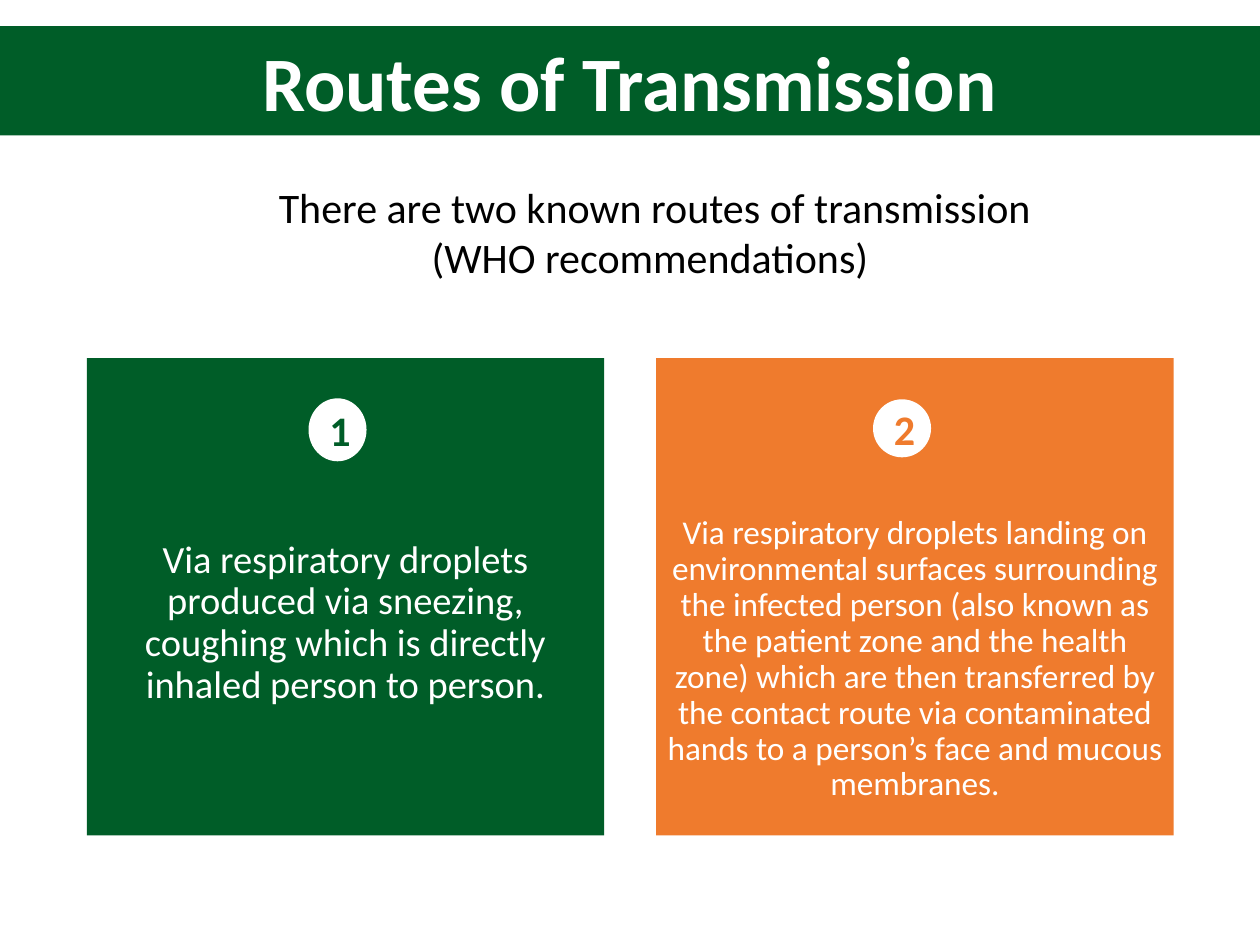
from pptx import Presentation
from pptx.dml.color import RGBColor
from pptx.enum.shapes import MSO_SHAPE
from pptx.enum.text import MSO_ANCHOR, MSO_AUTO_SIZE, PP_ALIGN
from pptx.util import Cm, Pt

RECTANGLE, OVAL = MSO_SHAPE.RECTANGLE, MSO_SHAPE.OVAL
TOP, MIDDLE = MSO_ANCHOR.TOP, MSO_ANCHOR.MIDDLE
CENTER = PP_ALIGN.CENTER
FIT_TEXT = MSO_AUTO_SIZE.SHAPE_TO_FIT_TEXT
GREEN, ORANGE, WHITE, BLACK = "005D28", "EF7B2D", "FFFFFF", "000000"

CARD_LEFT, CARD_TOP, CARD_WIDTH, CARD_HEIGHT = 1.75, 7.22, 10.43, 9.62
CARD_STEP = 11.48
CARDS = [
    {
        "color": GREEN, "size": 22, "inset": 0.23, "text_offset": 3.67,
        "badge": (6.22, 8.03, 1.17, 1.27),
        "text": "Via respiratory droplets produced via sneezing, coughing which "
                "is directly inhaled person to person.",
    },
    {
        "color": ORANGE, "size": 19, "inset": 0.2, "text_offset": 3.18,
        "badge": (17.6, 8.05, 1.17, 1.17),
        "text": "Via respiratory droplets landing on environmental surfaces "
                "surrounding the infected person (also known as the patient zone "
                "and the health zone) which are then transferred by the contact "
                "route via contaminated hands to a person’s face and mucous "
                "membranes.",
    },
]


def rgb(hex_color):
    """Turn a hex string into a colour."""
    return RGBColor.from_string(hex_color)


def apply(target, values):
    """Set every attribute named in a dict of format values."""
    for name, value in values.items():
        setattr(target, name, value)


class SlideBuilder:
    """Hold the style and the current slide."""

    font_name = "Calibri"

    def __init__(self, slide):
        """Start on the given slide."""
        self.slide = slide

    def fill_text(self, shape, text, size, color, bold=False, frame=None, spacing=None):
        """Put one centred paragraph into a shape."""
        text_frame = shape.text_frame
        apply(text_frame, {"word_wrap": True, **(frame or {})})
        paragraph = text_frame.paragraphs[0]
        apply(paragraph, {"alignment": CENTER, **(spacing or {})})
        run = paragraph.add_run()
        run.text = text
        apply(run.font, {"name": self.font_name, "size": Pt(size), "bold": bold})
        run.font.color.rgb = rgb(color)

    def shape(self, kind, box, fill):
        """Add a flat filled shape without outline."""
        shape = self.slide.shapes.add_shape(kind, *map(Cm, box))
        shape.shadow.inherit = False
        shape.fill.solid()
        shape.fill.fore_color.rgb = rgb(fill)
        shape.line.fill.background()
        return shape

    def label(self, kind, box, fill, text, size, color):
        """Add a shape with a bold label in its middle."""
        shape = self.shape(kind, box, fill)
        self.fill_text(shape, text, size, color, True, {"vertical_anchor": MIDDLE})

    def text(self, box, text, size, color):
        """Add a text box that fits its text."""
        shape = self.slide.shapes.add_textbox(*map(Cm, box))
        self.fill_text(shape, text, size, color, frame={"auto_size": FIT_TEXT},
                       spacing={"space_after": Pt(6)})

    def card(self, index, card):
        """Add a coloured card with its text and numbered badge."""
        left = CARD_LEFT + index * CARD_STEP
        shape = self.shape(RECTANGLE, (left, CARD_TOP, CARD_WIDTH, CARD_HEIGHT),
                           card["color"])
        inset = Cm(card["inset"])
        frame = {
            "vertical_anchor": TOP, "margin_top": Cm(card["text_offset"]),
            "margin_left": inset, "margin_right": inset, "margin_bottom": inset,
        }
        self.fill_text(shape, card["text"], card["size"], WHITE, frame=frame,
                       spacing={"line_spacing": 0.9})
        self.label(OVAL, card["badge"], WHITE, str(index + 1), 24, card["color"])


def main():
    """Build the slide and save it."""
    presentation = Presentation()
    apply(presentation, {"slide_width": Cm(25.4), "slide_height": Cm(19.05)})
    builder = SlideBuilder(presentation.slides.add_slide(presentation.slide_layouts[6]))
    builder.text((4.7, 3.53, 17, 2.31),
                 "There are two known routes of transmission (WHO recommendations) ",
                 24, BLACK)
    builder.label(RECTANGLE, (0, 0.53, 25.4, 2.2), GREEN,
                  "Routes of Transmission", 44, WHITE)
    for index, card in enumerate(CARDS):
        builder.card(index, card)
    presentation.save("out.pptx")


if __name__ == "__main__":
    main()
